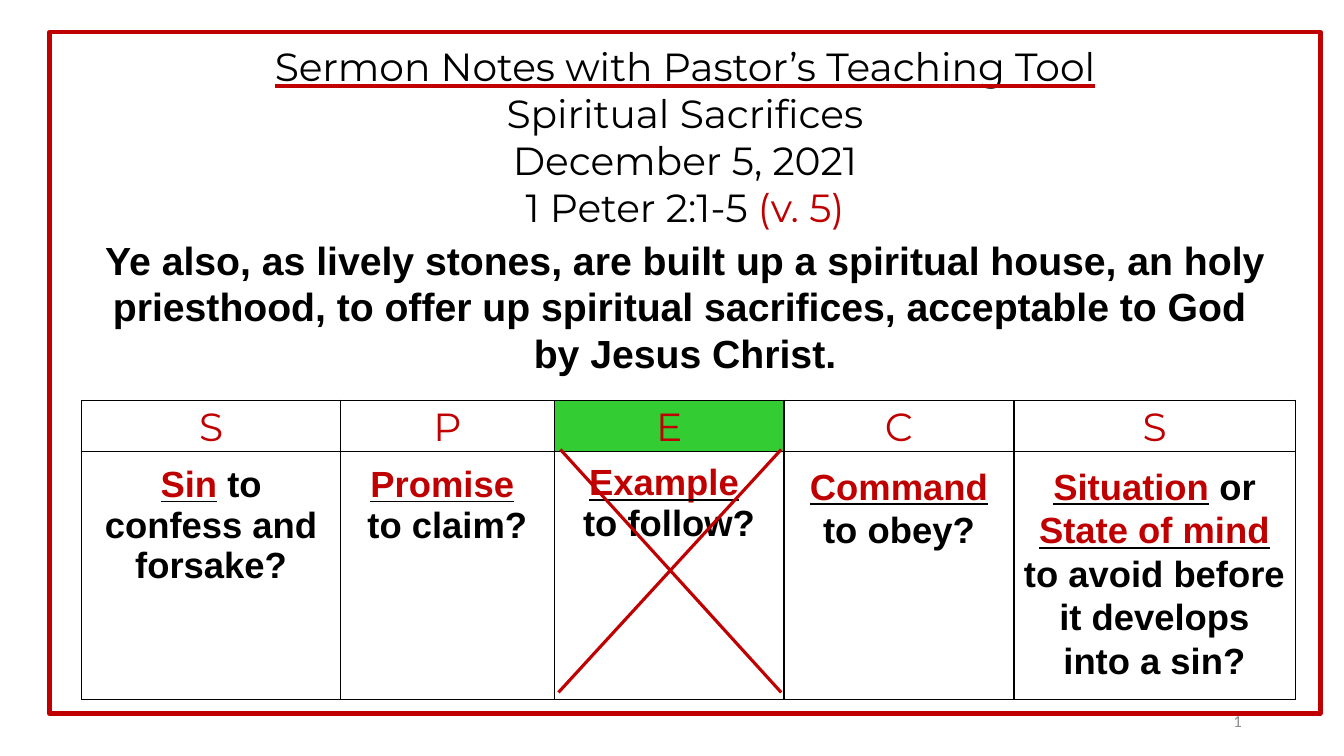
from lxml import etree
from pptx import Presentation
from pptx.dml.color import RGBColor
from pptx.enum import shapes, text
from pptx.oxml import ns
from pptx.util import Pt

BLACK = RGBColor(0x00, 0x00, 0x00)
RED = RGBColor(0xC0, 0x00, 0x00)
GREEN = RGBColor(0x33, 0xCC, 0x33)
GRAY = RGBColor(0x8C, 0x8C, 0x8C)

# Content: each paragraph is a list of (text, style) runs
TITLE_LINES = [
    [("Sermon Notes with Pastor’s Teaching Tool", "title")],
    [("Spiritual Sacrifices", "heading")],
    [("December 5, 2021", "heading")],
    [("1 Peter 2:1-5 ", "heading"), ("(v. 5)", "letter")],
]
VERSE_LINES = [
    [("Ye also, as lively stones, are built up a spiritual house, an holy "
      "priesthood, to offer up spiritual sacrifices, acceptable to God ", "verse")],
    [("by Jesus Christ.", "verse")],
]
# Letter, column width, top margin, line spacing, question paragraphs
QUESTIONS = [
    ("S", 185, 9.6, 1.0,
     [[("Sin", "key"), (" to confess and forsake?", "body")]]),
    ("P", 152.6, 9.6, 1.0,
     [[("Promise", "key"), (" ", "body")], [("to claim?", "body")]]),
    ("E", 164.2, 8.2, 1.0,
     [[("Example", "key"), (" ", "body")], [("to follow?", "body")]]),
    ("C", 164.2, 9.6, 1.07,
     [[("Command", "key"), (" to obey?", "body")]]),
    ("S", 200.9, 9.6, 1.07,
     [[("Situation", "key"), (" or ", "body"), ("State of mind", "key"),
       (" to avoid before it develops into a sin?", "body")]]),
]
ANSWERED = "E"

# Style: font, size, colour, bold, underline, underline colour
STYLES = {
    "title": ("Montserrat", 28, BLACK, False, text.MSO_UNDERLINE.HEAVY_LINE, RED),
    "heading": ("Montserrat", 28, BLACK, False, False, None),
    "letter": ("Montserrat", 28, RED, False, False, None),
    "verse": ("Arial", 28, BLACK, True, False, None),
    "key": ("Arial", 26, RED, True, True, BLACK),
    "body": ("Arial", 26, BLACK, True, False, None),
    "number": ("Calibri", 12, GRAY, False, False, None),
}

FRAME = (35.3, 23, 907.9, 486.7)
TABLE_LEFT, TABLE_TOP = 58.3, 285.8
ROW_HEIGHTS = (35.5, 177.3)
CROSS_TOP, CROSS_BOTTOM = 321.1, 494.6
CROSS_LINES = [(558, 398.9), (400.3, 558)]
NUMBER_BOX = (678.2, 500.4, 216, 28.8)


def points(values):
    return [Pt(value) for value in values]


def add_solid_fill(parent, color):
    fill = etree.SubElement(parent, ns.qn("a:solidFill"))
    etree.SubElement(fill, ns.qn("a:srgbClr"), val=str(color))


def style_run(run, style):
    name, size, color, bold, underline, underline_color = STYLES[style]
    font = run.font
    font.name, font.size, font.bold, font.underline = name, Pt(size), bold, underline
    font.color.rgb = color
    if underline_color is not None:
        underline_fill = etree.Element(ns.qn("a:uFill"))
        add_solid_fill(underline_fill, underline_color)
        run._r.get_or_add_rPr().find(ns.qn("a:solidFill")).addnext(underline_fill)


def write(text_frame, lines, spacing, align=text.PP_ALIGN.CENTER):
    text_frame.text = "\n".join("" for _ in lines)
    for paragraph, runs in zip(text_frame.paragraphs, lines):
        paragraph.alignment = align
        paragraph.line_spacing = spacing
        for words, style in runs:
            run = paragraph.add_run()
            run.text = words
            style_run(run, style)


def border_cell(cell):
    properties = cell._tc.get_or_add_tcPr()
    for position, side in enumerate(("lnL", "lnR", "lnT", "lnB")):
        line = etree.Element(ns.qn("a:" + side), w=str(Pt(1)))
        add_solid_fill(line, BLACK)
        properties.insert(position, line)


def fill_cell(cell, lines, spacing, top=0, color=None):
    cell.margin_left = cell.margin_right = Pt(5)
    cell.margin_top, cell.margin_bottom = Pt(top), 0
    cell.fill.background()
    if color is not None:
        cell.fill.solid()
        cell.fill.fore_color.rgb = color
    border_cell(cell)
    write(cell.text_frame, lines, spacing)


presentation = Presentation()
presentation.slide_width, presentation.slide_height = Pt(960), Pt(540)
slide = presentation.slides.add_slide(presentation.slide_layouts[6])

# Red frame with title and verse
frame = slide.shapes.add_shape(shapes.MSO_SHAPE.RECTANGLE, *points(FRAME))
frame.shadow.inherit = False
frame.fill.background()
frame.line.color.rgb = RED
frame.line.width = Pt(3)
frame_text = frame.text_frame
frame_text.word_wrap = True
frame_text.vertical_anchor = text.MSO_ANCHOR.TOP
frame_text.margin_top = Pt(7.6)
write(frame_text, TITLE_LINES + VERSE_LINES, Pt(33.5))
frame_text.paragraphs[len(TITLE_LINES)].space_before = Pt(4)

# Table of questions
widths = [question[1] for question in QUESTIONS]
table = slide.shapes.add_table(
    2, len(QUESTIONS),
    *points((TABLE_LEFT, TABLE_TOP, sum(widths), sum(ROW_HEIGHTS)))).table
table.first_row = table.horz_banding = False
for row, height in zip(table.rows, ROW_HEIGHTS):
    row.height = Pt(height)
for column, (letter, width, top, spacing, lines) in enumerate(QUESTIONS):
    table.columns[column].width = Pt(width)
    fill_cell(table.cell(0, column), [[(letter, "letter")]], 1.07,
              color=GREEN if letter == ANSWERED else None)
    fill_cell(table.cell(1, column), lines, spacing, top)

# Cross over the example column
for start, end in CROSS_LINES:
    connector = slide.shapes.add_connector(
        shapes.MSO_CONNECTOR.STRAIGHT,
        *points((start, CROSS_TOP, end, CROSS_BOTTOM)))
    connector.line.color.rgb = RED
    connector.line.width = Pt(2.25)
    etree.SubElement(connector._element.spPr, ns.qn("a:effectLst"))

# Slide number
number_text = slide.shapes.add_textbox(*points(NUMBER_BOX)).text_frame
number_text.word_wrap = True
number_text.vertical_anchor = text.MSO_ANCHOR.MIDDLE
write(number_text, [[("1", "number")]], 1.0, text.PP_ALIGN.RIGHT)

presentation.save("out.pptx")
